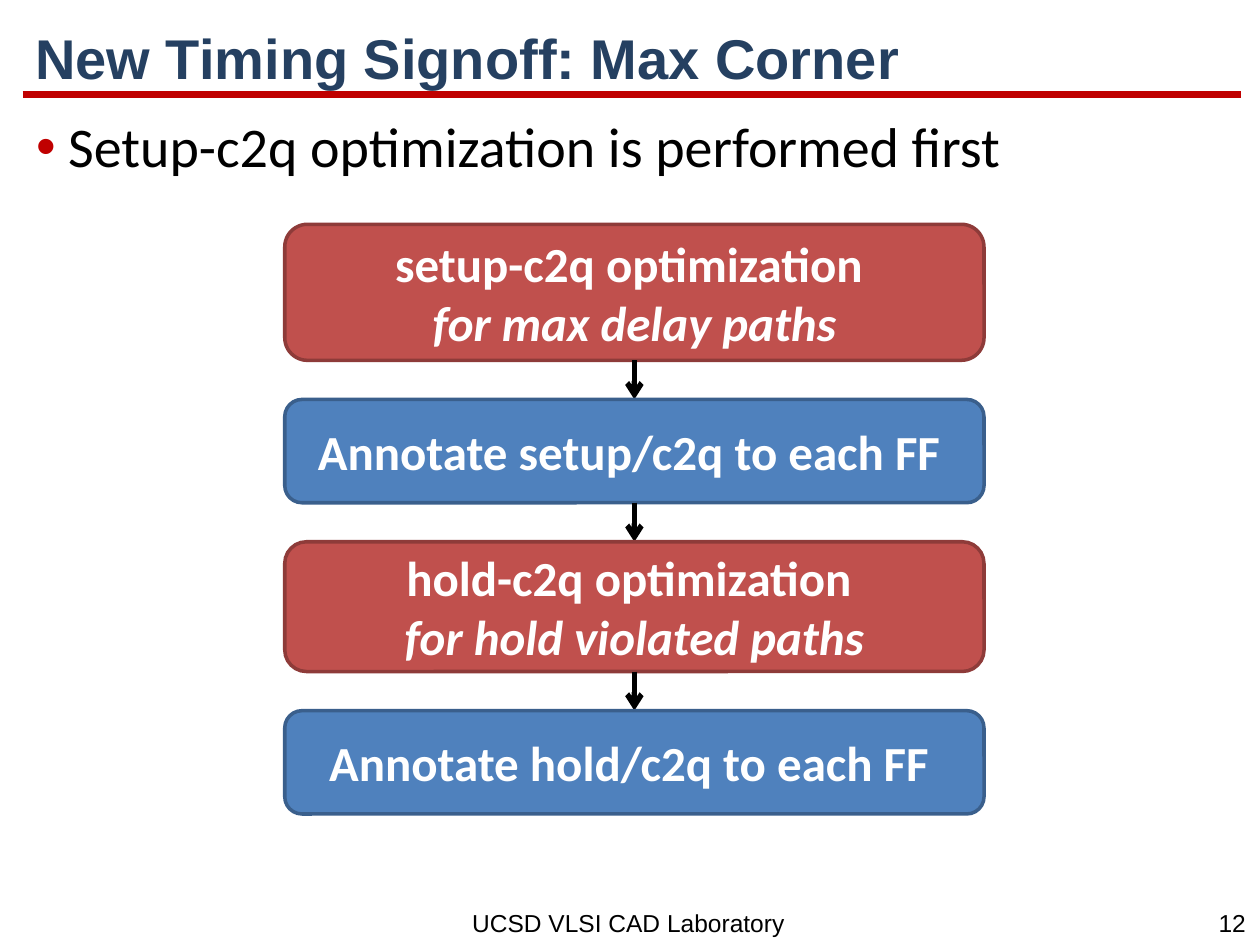
from lxml.etree import SubElement
from pptx import Presentation
from pptx.dml.color import RGBColor
from pptx.enum.shapes import MSO_CONNECTOR, MSO_SHAPE
from pptx.enum.text import MSO_ANCHOR, MSO_AUTO_SIZE, PP_ALIGN
from pptx.oxml import parse_xml
from pptx.oxml.ns import nsdecls, qn
from pptx.util import Inches, Pt


def style(font, name, size, color, bold=False):
    font.name, font.size, font.bold = name, Pt(size), bold
    font.color.rgb = RGBColor.from_string(color)


def add_line(page, start, end, color, width):
    line = page.shapes.add_connector(
        MSO_CONNECTOR.STRAIGHT, *[Inches(value) for value in (*start, *end)])
    line.line.color.rgb = RGBColor.from_string(color)
    line.line.width = Pt(width)
    SubElement(line._element.spPr, qn("a:effectLst"))
    return line


deck = Presentation()
deck.slide_width, deck.slide_height = Inches(10), Inches(7.5)
page = deck.slides.add_slide(deck.slide_layouts[1])
title, body = page.placeholders

add_line(page, (0.18, 0.75), (9.85, 0.75), "C00000", 4.5)

for left, width, text in ((3.61, 2.81, "UCSD VLSI CAD Laboratory "), (9.56, 0.44, "12")):
    box = page.shapes.add_textbox(Inches(left), Inches(7.16), Inches(width), Inches(0.34))
    box.text_frame.word_wrap = False
    para = box.text_frame.paragraphs[0]
    para.text = text
    para.alignment = PP_ALIGN.CENTER
    style(para.font, "Arial", 14, "000000")

title.left, title.top, title.width, title.height = [
    Inches(value) for value in (0.18, 0.16, 9.68, 0.65)]
title.text_frame.auto_size = MSO_AUTO_SIZE.NONE
title.text_frame.vertical_anchor = MSO_ANCHOR.MIDDLE
para = title.text_frame.paragraphs[0]
para.text = "New Timing Signoff: Max Corner"
para.alignment = PP_ALIGN.LEFT
para.line_spacing = 0.9
style(para.font, "Arial", 32, "254061", True)

body.left, body.top, body.width, body.height = [
    Inches(value) for value in (0.19, 0.92, 9.66, 6.08)]
body.text_frame.auto_size = MSO_AUTO_SIZE.NONE
para = body.text_frame.paragraphs[0]
para.text = "Setup-c2q optimization is performed first"
para.line_spacing = 0.85
para.space_before = Pt(0)
properties = para._p.get_or_add_pPr()
properties.set("marL", str(Inches(0.25)))
properties.set("indent", str(-Inches(0.25)))
for bullet in ('<a:buClr {}><a:srgbClr val="C00000"/></a:buClr>',
               '<a:buFont {} typeface="Arial"/>', '<a:buChar {} char="•"/>'):
    properties.append(parse_xml(bullet.format(nsdecls("a"))))
style(para.font, "Calibri", 32, "000000")

red, blue = ("C0504D", "8E3B39"), ("4F81BD", "3A5F8C")
steps = [
    (1.08, red, ["setup-c2q optimization ", "for max delay paths"]),
    (0.82, blue, ["Annotate setup/c2q to each FF "]),
    (1.03, red, ["hold-c2q optimization ", "for hold violated paths"]),
    (0.82, blue, ["Annotate hold/c2q to each FF "]),
]
step_left, step_width, gap = 2.26, 5.55, 0.31
center = step_left + step_width / 2
top = 1.78
for number, (height, (fill, outline), lines) in enumerate(steps):
    if number:
        arrow = add_line(page, (center, top - gap), (center, top), "000000", 3)
        SubElement(arrow.line._get_or_add_ln(), qn("a:tailEnd"), type="arrow")
    box = page.shapes.add_shape(
        MSO_SHAPE.ROUNDED_RECTANGLE, Inches(step_left), Inches(top),
        Inches(step_width), Inches(height))
    box.shadow.inherit = False
    box.fill.solid()
    box.fill.fore_color.rgb = RGBColor.from_string(fill)
    box.line.color.rgb = RGBColor.from_string(outline)
    box.line.width = Pt(2)
    frame = box.text_frame
    frame.word_wrap = False
    frame.vertical_anchor = MSO_ANCHOR.MIDDLE
    frame.text = "\n".join(lines)
    for row, para in enumerate(frame.paragraphs):
        para.alignment = PP_ALIGN.CENTER
        style(para.font, "Calibri", 28, "FFFFFF", True)
        para.font.italic = row == 1
    top += height + gap

deck.save("out.pptx")
